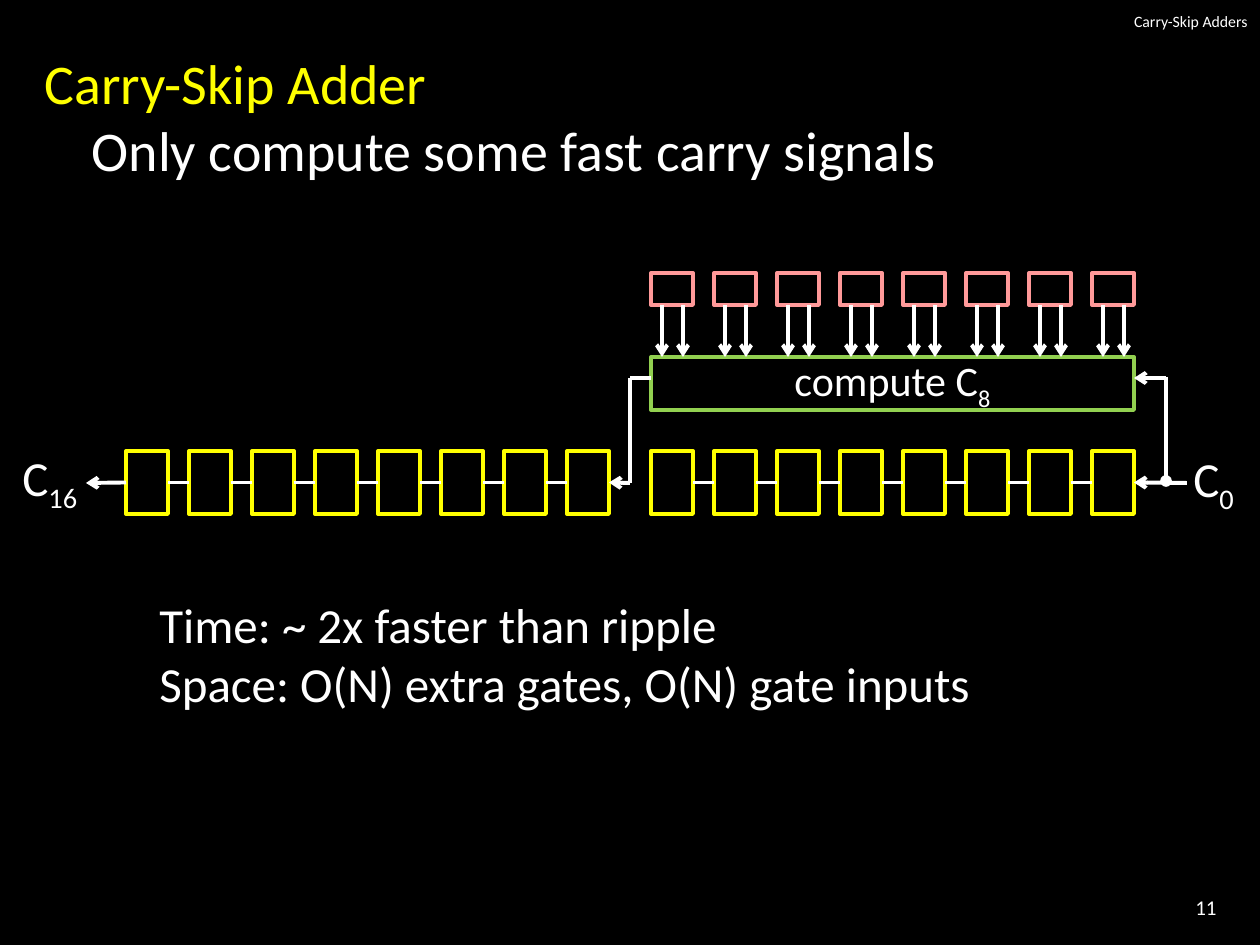
from pptx import Presentation
from pptx.dml.color import RGBColor
from pptx.enum.shapes import MSO_CONNECTOR, MSO_SHAPE
from pptx.enum.text import MSO_ANCHOR, MSO_AUTO_SIZE, PP_ALIGN
from pptx.oxml.ns import qn
from pptx.util import Emu, Pt
from lxml import etree

RECT = MSO_SHAPE.RECTANGLE
STRAIGHT = MSO_CONNECTOR.STRAIGHT
TOP, MIDDLE = MSO_ANCHOR.TOP, MSO_ANCHOR.MIDDLE
LEFT, CENTER, RIGHT = PP_ALIGN.LEFT, PP_ALIGN.CENTER, PP_ALIGN.RIGHT
NO_FIT, GROW = MSO_AUTO_SIZE.NONE, MSO_AUTO_SIZE.SHAPE_TO_FIT_TEXT
LEFT_SIDE, RIGHT_SIDE = 1, 3

COLORS = {
    "background": "000000",
    "text": "FFFFFF",
    "heading": "FFFF00",
    "adder": "FFFF00",
    "inputs": "FF9999",
    "skip": "92D050",
    "wire": "FFFFFF",
}
FONT = "Calibri"
LINE_WIDTH = Pt(2.25)

# Bit grid, in px
BITS, PITCH, CELL_W = 8, 63, 42
HIGH_X, LOW_X = 126, 651
ADDER_Y, ADDER_H = 451, 63
CARRY_Y = 483
INPUT_Y, INPUT_H = 273, 32
SKIP_Y, SKIP_W, SKIP_H = 357, 483, 53
SKIP_CARRY_Y = 378


def px(length):
    return Emu(round(length * 914400 / 126))


def color(name):
    return RGBColor.from_string(COLORS[name])


def place(shape, *box):
    for side, length in zip(("left", "top", "width", "height"), box):
        setattr(shape, side, px(length))


def format_frame(frame, **changes):
    values = {"word_wrap": True, "auto_size": NO_FIT, "vertical_anchor": TOP}
    for name, value in {**values, **changes}.items():
        setattr(frame, name, value)


def add_run(paragraph, words, size, color_name="text", subscript=False):
    run = paragraph.add_run()
    run.text = words
    for name, value in {"name": FONT, "size": Pt(size)}.items():
        setattr(run.font, name, value)
    run.font.color.rgb = color(color_name)
    if subscript:
        run._r.get_or_add_rPr().set("baseline", "-25000")


def write_carry(paragraph, words, index, size):
    add_run(paragraph, words, size)
    add_run(paragraph, index, size, subscript=True)


def add_label(slide, box, **frame_format):
    label = slide.shapes.add_textbox(*map(px, box))
    format_frame(label.text_frame, **frame_format)
    return label.text_frame


def add_block(slide, box, outline):
    block = slide.shapes.add_shape(RECT, *map(px, box))
    block.shadow.inherit = False
    block.fill.background()
    block.line.color.rgb = color(outline)
    block.line.width = LINE_WIDTH
    return block


def add_wire(slide, start, end, tip=None, source=None, target=None):
    """Draw a wire; source and target are blocks it leaves and enters on the left-going carry path."""
    wire = slide.shapes.add_connector(STRAIGHT, *map(px, start + end))
    wire.line.color.rgb = color("wire")
    wire.line.width = LINE_WIDTH
    if tip:
        etree.SubElement(wire.line._get_or_add_ln(), qn("a:tailEnd"), type=tip)
    etree.SubElement(wire._element.spPr, qn("a:effectLst"))
    if source:
        wire.begin_connect(source, LEFT_SIDE)
    if target:
        wire.end_connect(target, RIGHT_SIDE)


def add_row(slide, left, top, height, outline):
    return [add_block(slide, (left + bit * PITCH, top, CELL_W, height), outline)
            for bit in range(BITS)]


def add_ripple_adder(slide, left):
    cells = add_row(slide, left, ADDER_Y, ADDER_H, "adder")
    for bit, (upper, lower) in enumerate(zip(cells, cells[1:]), 1):
        x = left + bit * PITCH
        add_wire(slide, (x, CARRY_Y), (x - PITCH + CELL_W, CARRY_Y),
                 source=lower, target=upper)
    return cells


def add_headings(slide):
    title, body = slide.shapes.title, slide.placeholders[1]
    place(title, 777, 0, 483, 42)
    format_frame(title.text_frame, vertical_anchor=MIDDLE)
    title_line = title.text_frame.paragraphs[0]
    title_line.alignment = RIGHT
    add_run(title_line, "Carry-Skip Adders", 9)

    # Heading and its indented second line share one hanging paragraph
    place(body, 32, 42, 1197, 179)
    format_frame(body.text_frame)
    heading = body.text_frame.paragraphs[0]
    properties = heading._p.get_or_add_pPr()
    properties.set("marL", str(px(47)))
    properties.set("indent", str(-px(47)))
    etree.SubElement(properties, qn("a:buNone"))
    add_run(heading, "Carry-Skip Adder", 32, "heading")
    heading.add_line_break()
    add_run(heading, "Only compute some fast carry signals", 32)


def add_skip_logic(slide):
    skip = add_block(slide, (LOW_X, SKIP_Y, SKIP_W, SKIP_H), "skip")
    format_frame(skip.text_frame, vertical_anchor=MIDDLE)
    caption = skip.text_frame.paragraphs[0]
    caption.alignment = CENTER
    write_carry(caption, "compute C", "8", 24)

    # Each input pair feeds two signals down
    add_row(slide, LOW_X, INPUT_Y, INPUT_H, "inputs")
    for bit in range(BITS):
        for offset in (11, 32):
            x = LOW_X + bit * PITCH + offset
            add_wire(slide, (x, INPUT_Y + INPUT_H), (x, SKIP_Y), "arrow")


def add_carries(slide, high, low):
    skip_right, branch_x, skip_out_x = LOW_X + SKIP_W, 1166, 630

    # Carry in, with a branch up to the skip logic
    add_wire(slide, (1187, CARRY_Y), (skip_right, CARRY_Y), "arrow", target=low[-1])
    add_wire(slide, (branch_x, SKIP_CARRY_Y), (skip_right, SKIP_CARRY_Y), "arrow")
    add_wire(slide, (branch_x, SKIP_CARRY_Y - 1), (branch_x, CARRY_Y - 2), "oval")

    # Skip carry down to the high half
    add_wire(slide, (LOW_X, SKIP_CARRY_Y), (skip_out_x, SKIP_CARRY_Y))
    add_wire(slide, (skip_out_x, CARRY_Y), (skip_out_x, SKIP_CARRY_Y))
    add_wire(slide, (skip_out_x, CARRY_Y), (609, CARRY_Y), "arrow", target=high[-1])

    # Carry out
    add_wire(slide, (HIGH_X, CARRY_Y), (86, CARRY_Y), "arrow", source=high[0])

    for index, box in (("0", (1181, 442, 68, 72)), ("16", (10, 441, 86, 72))):
        label = add_label(slide, box, word_wrap=False, auto_size=GROW)
        write_carry(label.paragraphs[0], "C", index, 28)


def add_costs(slide):
    costs = add_label(slide, (147, 588, 903, 131), auto_size=GROW)
    add_run(costs.paragraphs[0], "Time: ~ 2x faster than ripple", 28)
    add_run(costs.add_paragraph(), "Space: O(N) extra gates, O(N) gate inputs", 28)


def add_page_number(slide):
    number = add_label(slide, (1124, 882, 105, 50), vertical_anchor=MIDDLE)
    number.paragraphs[0].alignment = RIGHT
    add_run(number.paragraphs[0], "11", 12)


def main():
    deck = Presentation()
    deck.slide_width, deck.slide_height = px(1260), px(945)
    slide = deck.slides.add_slide(deck.slide_layouts[1])
    slide.background.fill.solid()
    slide.background.fill.fore_color.rgb = color("background")

    add_headings(slide)
    high, low = (add_ripple_adder(slide, left) for left in (HIGH_X, LOW_X))
    add_skip_logic(slide)
    add_carries(slide, high, low)
    add_costs(slide)
    add_page_number(slide)
    deck.save("out.pptx")


if __name__ == "__main__":
    main()
